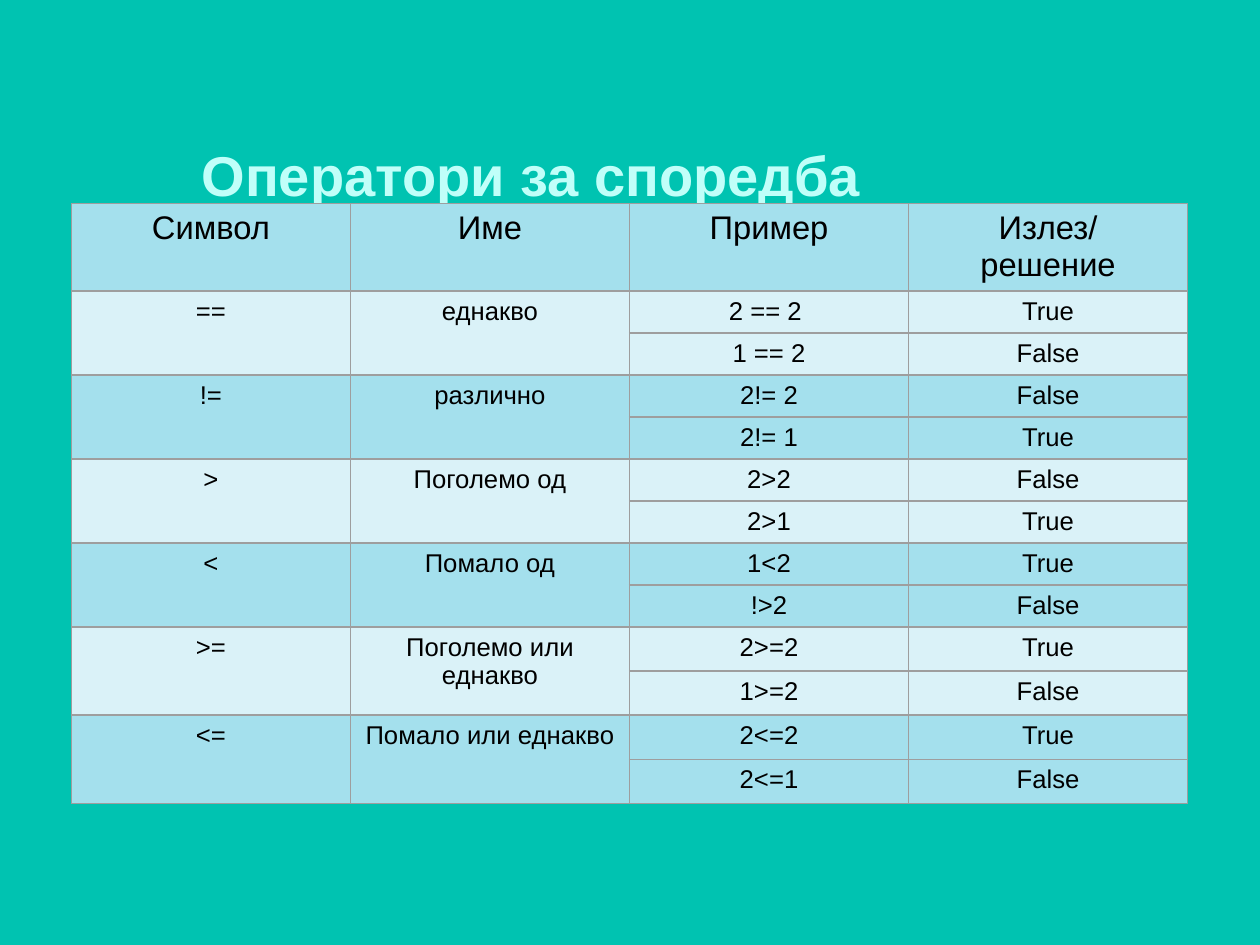
from lxml import etree
from pptx import Presentation
from pptx import util as u
from pptx.dml import color
from pptx.enum import text
from pptx.oxml import ns

HUES = {"back": "00C3B1", "title": "C0FFF9", "dark": "A4E0ED",
        "light": "DAF2F8", "line": "9E9E9E", "ink": "000000"}
HEAD = ["Символ", "Име", "Пример", "Излез/\nрешение"]
# Symbol, name, then two examples with their results
GROUPS = [
    ("==", "еднакво", ("2 == 2 ", "True"), ("1 == 2", "False")),
    ("!=", "различно", ("2!= 2", "False"), ("2!= 1", "True")),
    (">", "Поголемо од", ("2>2", "False"), ("2>1", "True")),
    ("<", "Помало од", ("1<2", "True"), ("!>2", "False")),
    (">=", "Поголемо или еднакво", ("2>=2", "True"), ("1>=2", "False")),
    ("<=", "Помало или еднакво", ("2<=2", "True"), ("2<=1", "False")),
]


def style(frame, size, hue, bold=False):
    for para in frame.paragraphs:
        para.alignment = text.PP_ALIGN.CENTER
        for run in para.runs:
            run.font.name = "Arial"
            run.font.size = u.Pt(size)
            run.font.bold = bold
            run.font.color.rgb = color.RGBColor.from_string(HUES[hue])


def border(cell):
    props = cell._tc.get_or_add_tcPr()
    for side in ("lnL", "lnR", "lnT", "lnB"):
        line = etree.SubElement(props, ns.qn("a:" + side), w=str(u.Pt(0.75)))
        fill = etree.SubElement(line, ns.qn("a:solidFill"))
        etree.SubElement(fill, ns.qn("a:srgbClr"), val=HUES["line"])


# Slide and background
deck = Presentation()
deck.slide_width, deck.slide_height = u.Pt(540), u.Pt(405)
slide = deck.slides.add_slide(deck.slide_layouts[5])
slide.background.fill.solid()
slide.background.fill.fore_color.rgb = color.RGBColor.from_string(HUES["back"])

# Title
title = slide.shapes.title
title.left, title.top = u.Pt(0), u.Pt(50.4)
title.width, title.height = u.Pt(455), u.Pt(34)
frame = title.text_frame
frame.text = "Оператори за споредба"
frame.auto_size = text.MSO_AUTO_SIZE.NONE
frame.vertical_anchor = text.MSO_ANCHOR.TOP
frame.margin_left = frame.margin_right = u.Pt(7.2)
frame.margin_top, frame.margin_bottom = u.Pt(9.7), u.Pt(0)
style(frame, 24, "title", bold=True)

# Table grid
highs = [37.5] + [18] * 8 + [18.9] * 4
table = slide.shapes.add_table(len(highs), len(HEAD), u.Pt(30.6), u.Pt(87.3),
                               u.Pt(478.4), u.Pt(sum(highs))).table
for col in table.columns:
    col.width = u.Pt(119.6)
for row, high in zip(table.rows, highs):
    row.height = u.Pt(high)

# Table wording: each symbol and name spans two rows
rows = [HEAD]
for sign, name, first, second in GROUPS:
    top = len(rows)
    for col in (0, 1):
        table.cell(top, col).merge(table.cell(top + 1, col))
    rows += [(sign, name, *first), ("", "", *second)]

# Table look: each pair of rows shares one band colour
for r, row in enumerate(rows):
    band = "light" if (r + 1) // 2 % 2 else "dark"
    for c, words in enumerate(row):
        cell = table.cell(r, c)
        border(cell)
        cell.fill.solid()
        cell.fill.fore_color.rgb = color.RGBColor.from_string(HUES[band])
        cell.margin_left = cell.margin_right = u.Pt(5.2)
        cell.margin_top = cell.margin_bottom = u.Pt(2.6)
        if words:
            cell.text_frame.text = words
            style(cell.text_frame, 11 if r else 14, "ink")

deck.save("out.pptx")
